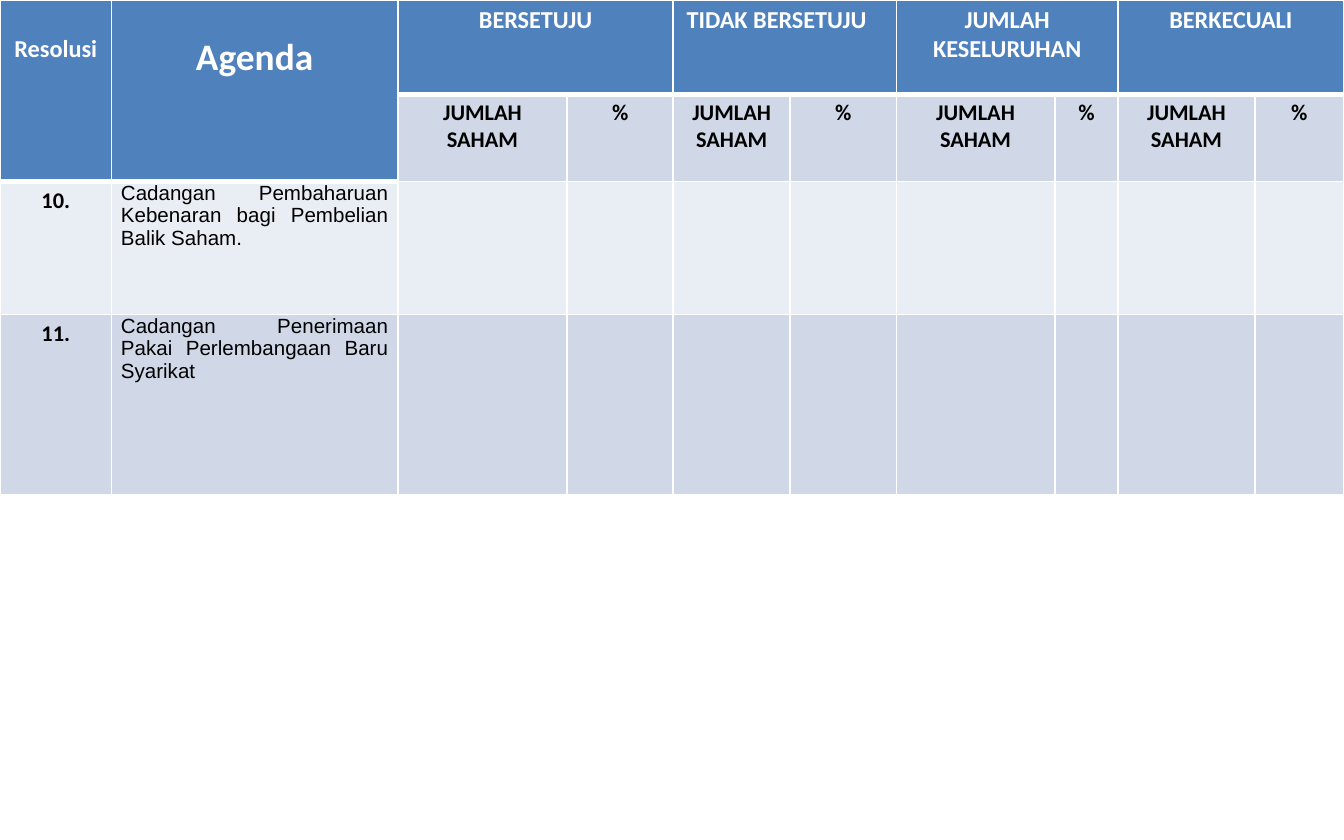
from lxml.etree import SubElement
from pptx import Presentation
from pptx.dml.color import RGBColor
from pptx.enum.text import PP_ALIGN as Align
from pptx.oxml.ns import qn
from pptx.util import Inches, Pt

HEADER, BAND_DARK, BAND_LIGHT = "4F81BD", "D0D8E8", "E9EDF4"
WHITE, BLACK = "FFFFFF", "000000"
COLS = [0.83, 2.13, 1.26, 0.79, 0.87, 0.79, 1.18, 0.47, 1.02, 0.66]
ROWS = [0.7, 0.65, 0.99, 1.34]
GROUPS = ["BERSETUJU", "TIDAK BERSETUJU", "JUMLAH KESELURUHAN", "BERKECUALI"]
RESOLUTIONS = [
    ("10.", "Cadangan Pembaharuan Kebenaran bagi Pembelian Balik Saham."),
    ("11.", "Cadangan Penerimaan Pakai Perlembangaan Baru Syarikat"),
]


def write(cell, text, size, color=BLACK, font="Calibri", bold=True, align=Align.CENTER):
    p = cell.text_frame.paragraphs[0]
    p.text = text
    p.alignment = align
    f = p.runs[0].font
    f.size, f.name, f.bold = Pt(size), font, bold
    f.color.rgb = RGBColor.from_string(color)


def style_cell(cell, fill, top, bottom):
    """Fill a cell and give it white borders; top and bottom are widths in points."""
    cell.fill.solid()
    cell.fill.fore_color.rgb = RGBColor.from_string(fill)
    cell.margin_left = cell.margin_right = Inches(0.1)
    cell.margin_top = cell.margin_bottom = Inches(0.04)
    tcPr = cell._tc.get_or_add_tcPr()
    for i, (side, width) in enumerate([("L", 1), ("R", 1), ("T", top), ("B", bottom)]):
        ln = SubElement(tcPr, qn(f"a:ln{side}"), w=str(Pt(width)))
        SubElement(SubElement(ln, qn("a:solidFill")), qn("a:srgbClr"), val=WHITE)
        tcPr.insert(i, ln)


prs = Presentation()
prs.slide_width, prs.slide_height = Inches(10), Inches(6.25)
slide = prs.slides.add_slide(prs.slide_layouts[6])
table = slide.shapes.add_table(len(ROWS), len(COLS), 0, 0,
                               prs.slide_width, Inches(sum(ROWS))).table
for column, width in zip(table.columns, COLS):
    column.width = Inches(width)
for row, height in zip(table.rows, ROWS):
    row.height = Inches(height)

# Fills and borders: a thick rule closes the header, one row lower in the first two columns
for r in range(len(ROWS)):
    for c in range(len(COLS)):
        header_end = 1 if c < 2 else 0
        fill = HEADER if r <= header_end else BAND_DARK if r % 2 else BAND_LIGHT
        closes = r == header_end or (r == 0 and c < 2)
        style_cell(table.cell(r, c), fill,
                   top=3 if r == header_end + 1 else 1, bottom=3 if closes else 1)

# Header
for c, (title, size) in enumerate([("Resolusi", 13), ("Agenda", 20)]):
    cell = table.cell(0, c)
    cell.merge(table.cell(1, c))
    cell.margin_top = Inches(0.26)
    write(cell, title, size, WHITE)

for i, group in enumerate(GROUPS):
    c = 2 + 2 * i
    table.cell(0, c).merge(table.cell(0, c + 1))
    align = Align.LEFT if group == "TIDAK BERSETUJU" else Align.CENTER
    write(table.cell(0, c), group, 13, WHITE, align=align)
    write(table.cell(1, c), "JUMLAH SAHAM", 12)
    write(table.cell(1, c + 1), "%", 12)

# Resolutions
for r, (number, agenda) in enumerate(RESOLUTIONS, start=2):
    write(table.cell(r, 0), number, 12)
    cell = table.cell(r, 1)
    cell.margin_left = cell.margin_right = Inches(0.07)
    cell.margin_top = cell.margin_bottom = 0
    write(cell, agenda, 11, font="Arial", bold=False, align=Align.JUSTIFY)

prs.save("out.pptx")
